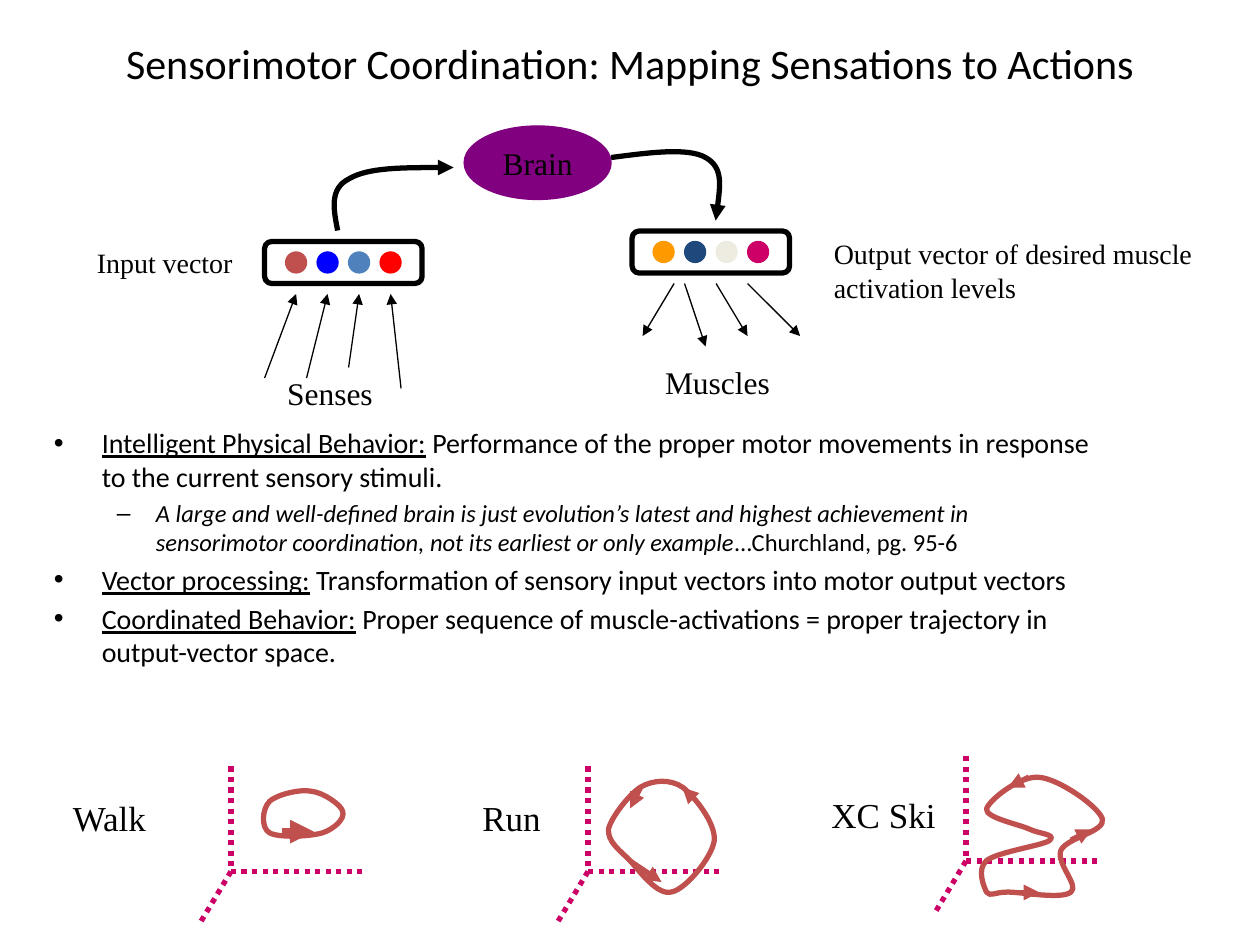
"""Slide on sensorimotor coordination: vectors, brain and motor trajectories."""
import pptx
import pptx.util
import pptx.dml.color
import pptx.enum.dml
import pptx.enum.shapes
import pptx.enum.text
import pptx.oxml.ns
from lxml import etree

GRID = 12
INK = {
    "black": "000000", "blue": "0000FF", "brick": "C0504D", "red": "FF0000",
    "steel": "4F81BD", "navy": "1F497D", "orange": "FF9900", "pink": "CC0066",
    "cream": "EEECE1", "purple": "800080",
}
SANS, SERIF = "Calibri", "Times New Roman"
TITLE = "Sensorimotor Coordination: Mapping Sensations to Actions"

POINTS = [
    (0, "Intelligent Physical Behavior:",
     " Performance of the proper motor movements in response to the current sensory stimuli."),
    (1, "A large and well-defined brain is just evolution’s latest and highest achievement in "
        "sensorimotor coordination, not its earliest or only example",
     "…Churchland, pg. 95-6"),
    (0, "Vector processing:",
     " Transformation of sensory input vectors into motor output vectors"),
    (0, "Coordinated Behavior:",
     " Proper sequence of muscle-activations = proper trajectory in output-vector space."),
]
LEVELS = [
    dict(size=16, left=0.38, hang=0.38, mark="•", face="Arial"),
    dict(size=14, left=0.81, hang=0.31, mark="–", face="Arial"),
]
LABELS = [
    (["Senses"], 18, (2.18, 2.92, 0.88, 0.4)),
    (["Muscles"], 18, (5.18, 2.83, 1.03, 0.4)),
    (["Input vector"], 16, (0.67, 1.9, 1.28, 0.37)),
    (["Output vector of desired muscle", "activation levels"], 16, (6.52, 1.83, 3.06, 0.64)),
    (["Walk"], 20, (0.48, 6.27, 0.8, 0.43)),
    (["Run"], 20, (3.73, 6.27, 0.7, 0.43)),
    (["XC Ski"], 20, (6.5, 6.25, 1.03, 0.43)),
]
VECTORS = [
    dict(at=(25.2, 23), dots=["brick", "blue", "steel", "red"],
         rays=[(0, 13, 3, 5), (4, 13, 6, 5), (8, 12, 9, 5), (13, 14, 12, 5)]),
    dict(at=(60.2, 22), dots=["orange", "navy", "cream", "pink"],
         rays=[(4, 5, 1, 10), (5, 5, 7, 11), (8, 5, 11, 10), (11, 5, 16, 10)]),
]
FLOWS = [
    [(2.68, 1.83), (2.65, 1.67), (2.61, 1.5), (2.77, 1.42), (2.92, 1.33), (3.26, 1.33), (3.6, 1.33)],
    [(4.85, 1.25), (5.16, 1.21), (5.46, 1.17), (5.6, 1.25), (5.74, 1.33), (5.71, 1.54), (5.68, 1.75)],
]
AXES = [(0, -10, 0, 0), (0, 0, -3, 5), (0, 0, 13, 0)]
GAITS = [
    dict(at=(22, 83), thick=4.5, rays=[(4.9, -3.8, 7.9, -3.8)],
         loop=[(2.56, 6.61), (2.65, 6.58), (2.74, 6.5), (2.72, 6.44), (2.71, 6.39), (2.57, 6.29),
               (2.47, 6.28), (2.38, 6.26), (2.19, 6.31), (2.14, 6.36), (2.08, 6.42), (2.07, 6.57),
               (2.14, 6.61), (2.21, 6.65), (2.46, 6.64), (2.56, 6.61)]),
    dict(at=(56, 83), thick=3, rays=[(10, -7, 9, -8), (4, -1, 7, 1), (5, -8, 4, -6)],
         loop=[(5.08, 6.25), (4.99, 6.31), (4.85, 6.49), (4.83, 6.58), (4.82, 6.68), (4.92, 6.75),
               (5, 6.83), (5.08, 6.92), (5.22, 7.11), (5.33, 7.08), (5.44, 7.06), (5.65, 6.81),
               (5.67, 6.67), (5.68, 6.53), (5.51, 6.32), (5.42, 6.25), (5.32, 6.18), (5.18, 6.19),
               (5.08, 6.25)]),
    dict(at=(92, 82), thick=3, rays=[(6, -8, 4, -7), (10, -2, 12, -3), (5, 3, 7, 3)],
         loop=[(8, 7.08), (8.11, 7.08), (8.43, 7.14), (8.5, 7.08), (8.57, 7.03), (8.38, 6.85),
               (8.42, 6.75), (8.46, 6.65), (8.78, 6.6), (8.75, 6.5), (8.72, 6.4), (8.4, 6.18),
               (8.25, 6.17), (8.1, 6.15), (7.85, 6.35), (7.83, 6.42), (7.82, 6.49), (8.08, 6.54),
               (8.17, 6.58), (8.25, 6.62), (8.39, 6.62), (8.33, 6.67), (8.28, 6.71), (7.92, 6.76),
               (7.83, 6.83), (7.75, 6.9), (7.81, 7.04), (7.83, 7.08), (7.86, 7.12), (7.89, 7.08),
               (8, 7.08)]),
]

qn = pptx.oxml.ns.qn
Pt, inch = pptx.util.Pt, pptx.util.Inches
KIND = pptx.enum.shapes.MSO_SHAPE
ALIGN = pptx.enum.text.PP_ALIGN
MID = pptx.enum.text.MSO_ANCHOR.MIDDLE
GROW = pptx.enum.text.MSO_AUTO_SIZE.SHAPE_TO_FIT_TEXT


def hue(name):
    return pptx.dml.color.RGBColor.from_string(INK[name])


def cell(*steps):
    return [inch(step / GRID) for step in steps]


def style(para, face, size):
    para.font.name, para.font.size = face, Pt(size)
    para.font.color.rgb = hue("black")


def stroke(item, color, width, tip=False):
    item.line.color.rgb, item.line.width = hue(color), Pt(width)
    if tip:
        edge = item.element.spPr.find(qn("a:ln"))
        etree.SubElement(edge, qn("a:tailEnd"), type="triangle")


def ray(slide, at, ends, color, width, tip=True):
    (x, y), (a, b, c, d) = at, ends
    line = slide.shapes.add_connector(
        pptx.enum.shapes.MSO_CONNECTOR.STRAIGHT, *cell(x + a, y + b, x + c, y + d))
    if not tip:
        line.line.dash_style = pptx.enum.dml.MSO_LINE.ROUND_DOT
    stroke(line, color, width, tip)
    etree.SubElement(line.element.spPr, qn("a:effectLst"))


def form(slide, kind, box, fill, color, width):
    item = slide.shapes.add_shape(kind, *cell(*box))
    item.shadow.inherit = False
    if fill:
        item.fill.solid()
        item.fill.fore_color.rgb = hue(fill)
    else:
        item.fill.background()
    stroke(item, color, width)
    return item


def curve(slide, knots, color, close=False):
    first, *rest = [(inch(x), inch(y)) for x, y in knots]
    pen = slide.shapes.build_freeform(*first)
    pen.add_line_segments(rest, close=close)
    item = pen.convert_to_shape()
    item.shadow.inherit = False
    item.fill.background()
    stroke(item, color, 3, tip=not close)
    legs = list(item.element.iter(qn("a:lnTo")))
    for k in range(0, len(rest), 3):
        bend = etree.Element(qn("a:cubicBezTo"))
        legs[k].addprevious(bend)
        for leg in legs[k:k + 3]:
            bend.append(leg[0])
            leg.getparent().remove(leg)


def text(slide, box, wrap):
    frame = slide.shapes.add_textbox(*map(inch, box)).text_frame
    frame.word_wrap = wrap
    return frame


def label(slide, lines, size, box):
    frame = text(slide, box, False)
    frame.auto_size = GROW
    frame.text = "\n".join(lines)
    for para in frame.paragraphs:
        style(para, SERIF, size)


def bullets(slide):
    frame = text(slide, (0.33, 3.33, 8.5, 2.33), True)
    for k, (level, lead, rest) in enumerate(POINTS):
        look = LEVELS[level]
        para = frame.add_paragraph() if k else frame.paragraphs[0]
        para.level = level
        style(para, SANS, look["size"])
        para.space_before = Pt(look["size"] * 0.2)
        head, tail = para.add_run(), para.add_run()
        head.text, tail.text = lead, rest
        if level:
            head.font.italic = True
        else:
            head.font.underline = True
        props = para._p.get_or_add_pPr()
        props.set("marL", str(inch(look["left"])))
        props.set("indent", str(-inch(look["hang"])))
        mark = etree.Element(qn("a:buChar"), char=look["mark"])
        font = etree.Element(qn("a:buFont"), typeface=look["face"])
        props.find(qn("a:spcBef")).addnext(font)
        font.addnext(mark)


def main():
    deck = pptx.Presentation()
    deck.slide_width, deck.slide_height = inch(10), inch(7.5)
    slide = deck.slides.add_slide(deck.slide_layouts[6])

    frame = text(slide, (0.75, 0.25, 8.5, 0.5), True)
    frame.text, frame.vertical_anchor = TITLE, MID
    frame.paragraphs[0].alignment = ALIGN.CENTER
    style(frame.paragraphs[0], SANS, 24)
    bullets(slide)

    for vec in VECTORS:
        x, y = vec["at"]
        for k, dot in enumerate(vec["dots"]):
            form(slide, KIND.OVAL, (x + 2 + 3 * k, y + 1, 2, 2), dot, dot, 0.75)
        form(slide, KIND.ROUNDED_RECTANGLE, (x, y, 15, 4), None, "black", 3)
        for ends in vec["rays"]:
            ray(slide, vec["at"], ends, "black", 0.75)

    brain = form(slide, KIND.OVAL, (44.2, 12, 14, 7), "purple", "purple", 0.75).text_frame
    brain.text, brain.word_wrap, brain.vertical_anchor = "Brain", False, MID
    brain.paragraphs[0].alignment = ALIGN.CENTER
    style(brain.paragraphs[0], SERIF, 18)
    for knots in FLOWS:
        curve(slide, knots, "black")

    for gait in GAITS:
        for ends in AXES:
            ray(slide, gait["at"], ends, "pink", 3, tip=False)
        curve(slide, gait["loop"], "brick", close=True)
        for ends in gait["rays"]:
            ray(slide, gait["at"], ends, "brick", gait["thick"])
    for item in LABELS:
        label(slide, *item)
    deck.save("out.pptx")


if __name__ == "__main__":
    main()
